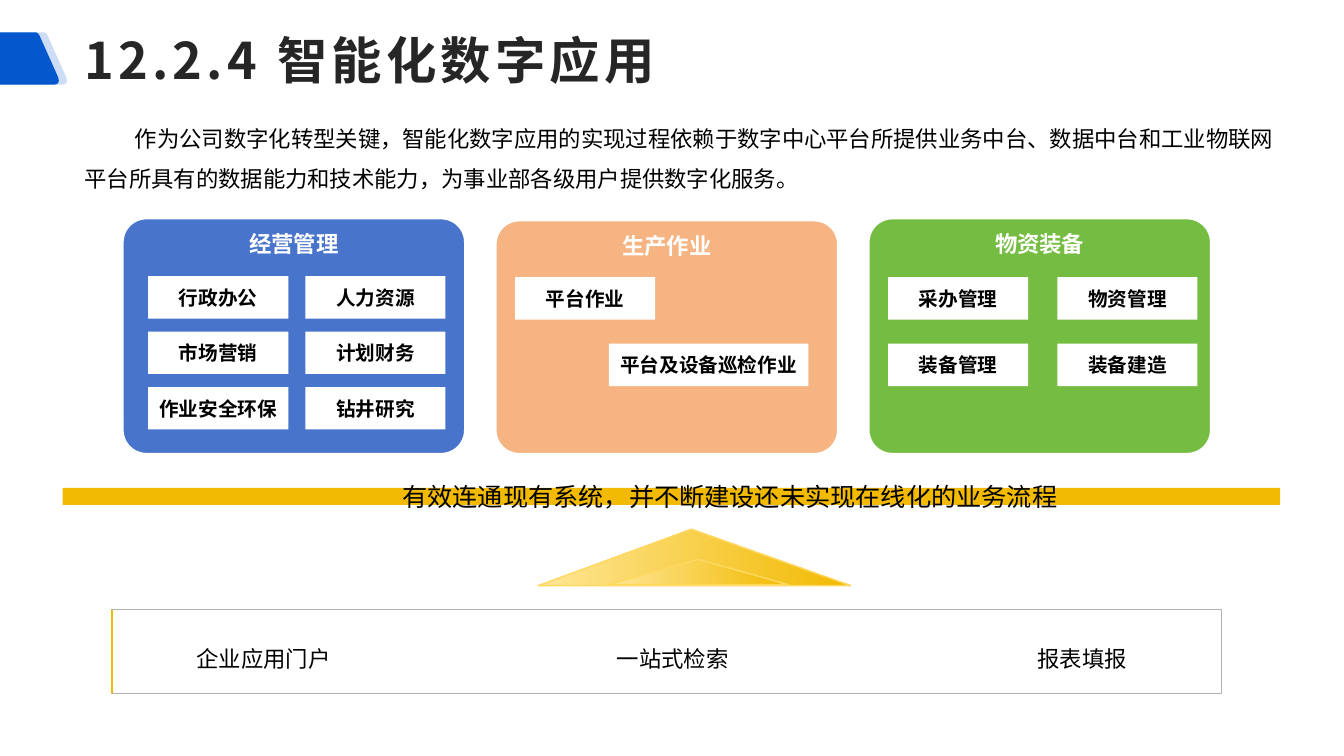
from dataclasses import dataclass

from lxml import etree
from pptx import Presentation
from pptx.dml.color import RGBColor
from pptx.enum.dml import MSO_FILL
from pptx.enum.shapes import MSO_CONNECTOR, MSO_SHAPE
from pptx.enum.text import MSO_ANCHOR, PP_ALIGN
from pptx.oxml.ns import qn
from pptx.util import Emu, Inches, Pt

RECT = MSO_SHAPE.RECTANGLE
ROUNDED = MSO_SHAPE.ROUNDED_RECTANGLE
TRIANGLE = MSO_SHAPE.ISOSCELES_TRIANGLE
STRAIGHT = MSO_CONNECTOR.STRAIGHT
CENTER, LEFT = PP_ALIGN.CENTER, PP_ALIGN.LEFT
TOP, MIDDLE = MSO_ANCHOR.TOP, MSO_ANCHOR.MIDDLE
GRADIENT = MSO_FILL.GRADIENT


@dataclass(frozen=True)
class Theme:
    """Colours, fonts and type sizes of the deck."""
    brand: str = "0557CD"
    heading: str = "262626"
    ink: str = "000000"
    paper: str = "FFFFFF"
    gold: str = "F2BA02"
    pale_gold: str = "FEE695"
    gold_edge: str = "FED961"
    frame: str = "B2B2B2"
    blue: str = "4874CB"
    orange: str = "F5B482"
    green: str = "75BD42"
    sans: str = "Noto Sans CJK SC"
    latin: str = "Arial"
    title: int = 36
    banner: int = 18
    body: int = 16
    tile: int = 14


THEME = Theme()


def rgb(code):
    """Return a colour from its hex code."""
    return RGBColor.from_string(code)


def write(box, text, size, color=THEME.ink, font=THEME.sans, bold=False,
          align=CENTER, anchor=MIDDLE, wrap=True):
    """Write one run into a box and return its paragraph and span."""
    frame = box.text_frame
    frame.word_wrap = wrap
    frame.vertical_anchor = anchor
    para = frame.paragraphs[0]
    para.alignment = align
    span = para.add_run()
    span.text = text
    span.font.size = Pt(size)
    span.font.bold = bold
    span.font.color.rgb = rgb(color)
    span.font.name = font
    etree.SubElement(span.font._element, qn("a:ea")).set("typeface", THEME.sans)
    return para, span


def add_box(page, kind, area, fill=None, line=None, width=1):
    """Add a flat preset shape over an area in inches."""
    box = page.shapes.add_shape(kind, *map(Inches, area))
    box.shadow.inherit = False
    if fill:
        box.fill.solid()
        box.fill.fore_color.rgb = rgb(fill)
    else:
        box.fill.background()
    if line:
        box.line.color.rgb = rgb(line)
        box.line.width = Pt(width)
    else:
        box.line.fill.background()
    return box


def add_label(page, area):
    """Add an empty text box over an area in inches."""
    return page.shapes.add_textbox(*map(Inches, area))


def rounded_corner(start, control, end, steps=6):
    """Return points along a curved corner."""
    shares = [step / steps for step in range(steps + 1)]
    return [tuple((1 - t) ** 2 * a + 2 * t * (1 - t) * b + t * t * c
                  for a, b, c in zip(start, control, end)) for t in shares]


def add_title(page, area, text):
    """Place the edge marker and the spaced title."""
    top, bottom = 0.32, 0.84
    for shift, alpha in ((0.08, 20), (0, 100)):
        corners = (rounded_corner((0.35, top), (0.38, top), (0.4, 0.37))
                   + rounded_corner((0.57, 0.75), (0.61, bottom), (0.53, bottom)))
        points = [(x + shift, y) for x, y in corners] + [(0, bottom)]
        builder = page.shapes.build_freeform(0, Inches(top), scale=1.0)
        builder.add_line_segments([(Inches(x), Inches(y)) for x, y in points])
        marker = builder.convert_to_shape()
        marker.shadow.inherit = False
        marker.fill.solid()
        marker.fill.fore_color.rgb = rgb(THEME.brand)
        marker.line.fill.background()
        color = marker.fill._xPr.find(qn("a:solidFill"))[0]
        etree.SubElement(color, qn("a:alpha")).set("val", str(alpha * 1000))
    _, span = write(add_label(page, area), text, THEME.title, THEME.heading,
                    bold=True, align=LEFT)
    span.font._element.set("spc", "300")


def add_intro(page, area, text):
    """Place the opening paragraph with a first-line indent."""
    para, _ = write(add_label(page, area), text, THEME.body, align=LEFT, anchor=TOP)
    para.line_spacing = 1.5
    para._p.get_or_add_pPr().set("indent", str(Inches(0.5)))


def add_card(page, area, name, color, tiles):
    """Place a named card and its tiles, each as column, row, width and text."""
    left, top, _, height = area
    card = add_box(page, ROUNDED, area, color, THEME.paper)
    card.adjustments[0] = 0.1
    write(card, name, THEME.body, THEME.paper, bold=True, anchor=TOP, wrap=False)
    for column, row, width, text in tiles:
        spot = (left + column, top + height + row, width, 0.42)
        tile = add_box(page, RECT, spot, THEME.paper)
        write(tile, text, THEME.tile, font=THEME.latin, bold=True)


def grid(columns, rows, names, width=1.39):
    """Lay names out row by row, with rows measured from the card's bottom."""
    spots = [(column, row) for row in rows for column in columns]
    return [(*spot, width, name) for spot, name in zip(spots, names)]


def add_banner(page, area, text):
    """Place the gold bar with its line of text."""
    _, top, _, height = area
    add_box(page, RECT, area, THEME.gold)
    label = add_label(page, (2.33, top + height / 2 - 0.2, 9.82, 0.4))
    write(label, text, THEME.banner, font=THEME.latin, anchor=TOP)


def add_peak(page, area, apex):
    """Place a triangle shaded from pale to full gold."""
    peak = add_box(page, TRIANGLE, area, THEME.gold, THEME.gold_edge)
    peak.adjustments[0] = apex
    peak.fill.gradient()
    peak.fill.gradient_angle = 0
    if peak.fill.type == GRADIENT:
        for stop, color in zip(peak.fill.gradient_stops, (THEME.pale_gold, THEME.gold)):
            stop.color.rgb = rgb(color)
        first, last = peak.fill.gradient_stops
        first.position, last.position = 0, 1


def add_portal(page, area, names):
    """Place the framed row of entry points with a gold left edge."""
    left, top, _, height = area
    for index, name in enumerate(names):
        cell = (left + 0.36 + 4.06 * index, top + 0.26, 2.29, 0.45)
        write(add_box(page, RECT, cell, THEME.paper), name, THEME.body)
    add_box(page, RECT, area, line=THEME.frame, width=0.75)
    ends = (left, top, left, top + height)
    edge = page.shapes.add_connector(STRAIGHT, *map(Inches, ends))
    edge.line.color.rgb = rgb(THEME.gold)
    edge.line.width = Pt(1.5)
    etree.SubElement(edge._element.spPr, qn("a:effectLst"))


def build_page(page):
    """Place every region of the page."""
    add_title(page, (0.74, 0.09, 12.59, 1), "12.2.4 智能化数字应用")
    add_intro(page, (0.74, 1.06, 12.14, 0.91),
              "作为公司数字化转型关键，智能化数字应用的实现过程依赖于数字中心平台所提供"
              "业务中台、数据中台和工业物联网平台所具有的数据能力和技术能力，"
              "为事业部各级用户提供数字化服务。")
    cards = (
        ("经营管理", THEME.blue, 2.33, grid(
            (0.25, 1.81), (-1.76, -1.21, -0.66),
            ("行政办公", "人力资源", "市场营销", "计划财务", "作业安全环保", "钻井研究"))),
        ("生产作业", THEME.orange, 2.31, [
            (0.19, -1.75, 1.39, "平台作业"),
            (1.12, -1.09, 1.98, "平台及设备巡检作业")]),
        ("物资装备", THEME.green, 2.33, grid(
            (0.19, 1.87), (-1.75, -1.09),
            ("采办管理", "物资管理", "装备管理", "装备建造"))),
    )
    for index, (name, color, height, tiles) in enumerate(cards):
        area = (1.22 + 3.7 * index, 4.5 - height, 3.39, height)
        add_card(page, area, name, color, tiles)
    add_banner(page, (0.62, 4.84, 12.08, 0.17),
               "有效连通现有系统，并不断建设还未实现在线化的业务流程")
    add_portal(page, (1.11, 6.05, 11.01, 0.83), ("企业应用门户", "一站式检索", "报表填报"))
    add_peak(page, (5.34, 5.25, 3.1, 0.56), 0.49)
    add_peak(page, (6.04, 5.55, 1.78, 0.25), 0.5)


def main():
    """Build the deck and save it."""
    deck = Presentation()
    deck.slide_width, deck.slide_height = Emu(12192000), Inches(7.5)
    build_page(deck.slides.add_slide(deck.slide_layouts[6]))
    deck.save("out.pptx")


if __name__ == "__main__":
    main()
